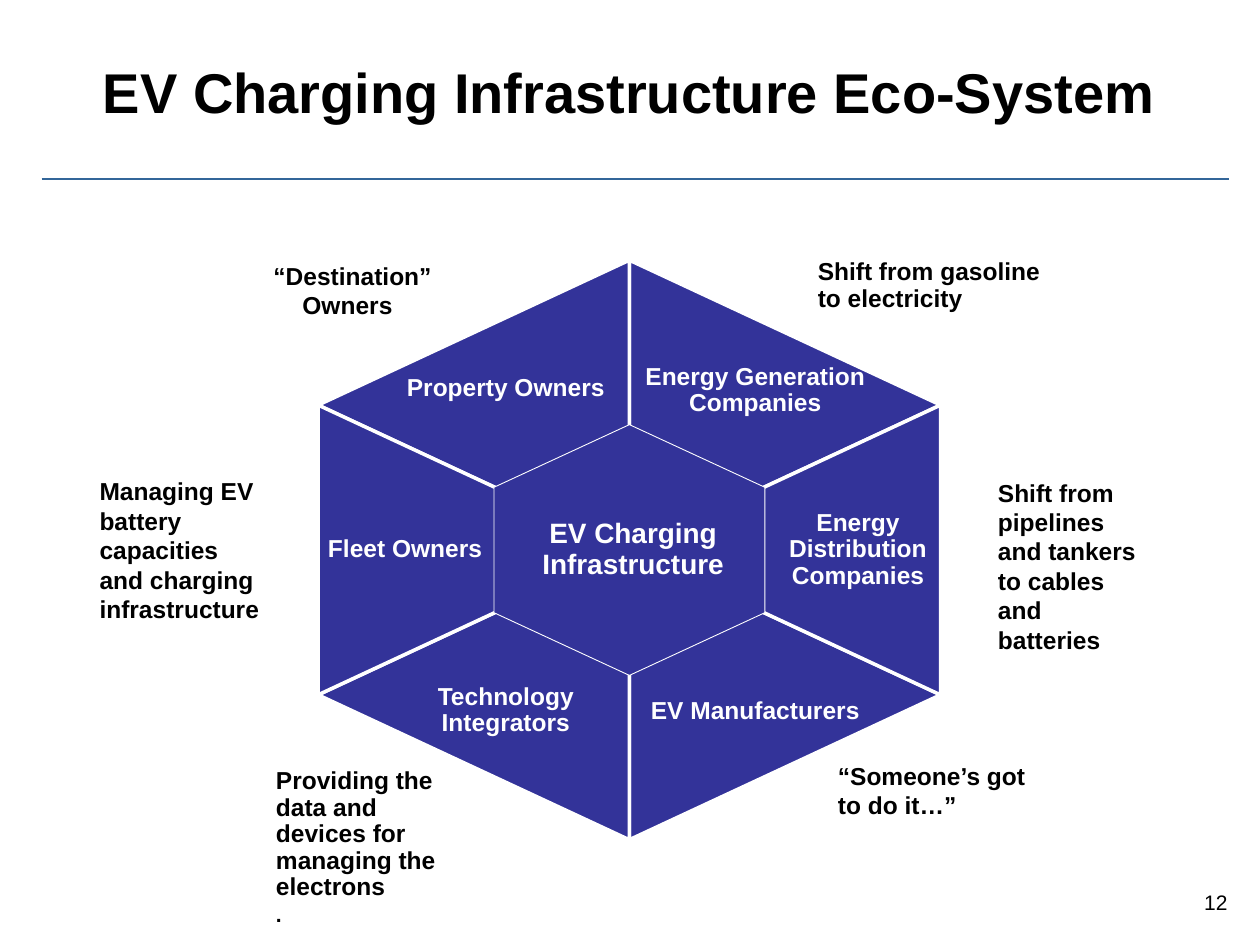
from lxml import etree
from pptx import Presentation
from pptx.dml.color import RGBColor
from pptx.enum.shapes import MSO_CONNECTOR, MSO_SHAPE
from pptx.enum.text import MSO_ANCHOR, MSO_AUTO_SIZE, PP_ALIGN
from pptx.oxml.ns import qn
from pptx.util import Inches, Pt

LINE = MSO_CONNECTOR.STRAIGHT
WEDGE = MSO_SHAPE.ISOSCELES_TRIANGLE
HEX = MSO_SHAPE.HEXAGON
TOP, MID = MSO_ANCHOR.TOP, MSO_ANCHOR.MIDDLE
LEFT, CENTER, RIGHT = PP_ALIGN.LEFT, PP_ALIGN.CENTER, PP_ALIGN.RIGHT
GROW, FIXED = MSO_AUTO_SIZE.SHAPE_TO_FIT_TEXT, MSO_AUTO_SIZE.NONE

BLACK = RGBColor(0, 0, 0)
WHITE = RGBColor(255, 255, 255)
NAVY = RGBColor(0x33, 0x33, 0x99)
BLUE = RGBColor(0x33, 0x66, 0x99)

WIDE, HIGH = Inches(10), Inches(7.5)
COLS, ROWS = 100, 75
HUB_X, HUB_Y = 49.95, 43.65
WEDGE_W, WEDGE_H = 23, 24.7

NOTES = [
    (["Shift from gasoline to electricity"], (64.5, 20.6, 18.9, 4.2), 0.9),
    (["Shift from pipelines and tankers to cables and batteries"],
     (78.8, 37.9, 11.9, 14.1), 1),
    (["“Someone’s got to do it…”"], (66.1, 60.4, 15.8, 6.8), 1),
    (["Managing EV battery capacities and charging infrastructure"],
     (7.5, 37.8, 14, 11.8), 1),
    (["Providing the data and devices for managing the electrons", "."],
     (21.5, 61, 14.8, 12.7), 0.9),
]
LABELS = [
    ("Fleet Owners", -17.8, 0, 13.9, 2.1),
    ("Energy Distribution Companies", 18.15, 0, 13.2, 6.4),
    ("Property Owners", -9.8, -12.8, 19.7, 2.1),
    ("Energy Generation Companies", 10, -12.65, 19.7, 4.2),
    ("EV Manufacturers", 10, 12.8, 19.7, 2.1),
    ("Technology Integrators", -9.8, 12.75, 19.7, 4.2),
]


def col(n):
    return int(WIDE * n / COLS)


def row(n):
    return int(HIGH * n / ROWS)


def spot(x, y, w, h):
    return col(x), row(y), col(w), row(h)


def around(x, y, w, h):
    return HUB_X + x - w / 2, HUB_Y + y - h / 2, w, h


def apply(item, values):
    for name, value in values.items():
        setattr(item, name, value)


def add_text(slide, lines, box, size=14, bold=True, color=BLACK, align=LEFT,
             anchor=TOP, pad=(0.04, 0), space=1, fit=GROW):
    frame = slide.shapes.add_textbox(*spot(*box)).text_frame
    side, edge = map(Inches, pad)
    apply(frame, {"word_wrap": True, "auto_size": fit,
                  "vertical_anchor": anchor, "margin_left": side,
                  "margin_right": side, "margin_top": edge,
                  "margin_bottom": edge})
    frame.text = "\n".join(lines)
    for para in frame.paragraphs:
        apply(para, {"alignment": align, "line_spacing": space})
        for run in para.runs:
            apply(run.font, {"name": "Arial", "size": Pt(size), "bold": bold})
            run.font.color.rgb = color
    return frame


def add_label(slide, text, box, size=14):
    add_text(slide, [text], around(*box), size, color=WHITE, align=CENTER,
             anchor=MID, pad=(0, 0), space=0.9)


def add_part(slide, kind, box, turn, width):
    part = slide.shapes.add_shape(kind, *spot(*around(*box)))
    part.rotation = turn
    part.shadow.inherit = False
    part.fill.solid()
    part.fill.fore_color.rgb = NAVY
    part.line.color.rgb = WHITE
    part.line.width = Pt(width)
    return part


def add_rule(slide):
    rule = slide.shapes.add_connector(LINE, col(3.3), row(14.2),
                                      col(97.5), row(14.2))
    rule.line.color.rgb = BLUE
    rule.line.width = Pt(1.5)
    etree.SubElement(rule._element.spPr, qn("a:effectLst"))


def add_wheel(slide):
    for side in (1, -1):
        for step in (1, -1, 0):
            point = side if step else -side
            box = (side * WEDGE_H / 2, step * WEDGE_W / 2, WEDGE_W, WEDGE_H)
            add_part(slide, WEDGE, box, 90 if point > 0 else 270, 2)
    hub = add_part(slide, HEX, (0, 0, 19.9, 21.5), 90, 0.5)
    hub.adjustments[0] = 0.25
    for text, *box in LABELS:
        add_label(slide, text, box)
    add_label(slide, "EV Charging Infrastructure", (0.3, 0, 17.7, 4.8), 16)


def add_notes(slide):
    for lines, box, space in NOTES:
        frame = add_text(slide, lines, box, space=space)
        for para in frame.paragraphs[1:]:
            para.space_before = Pt(2)
            para.runs[0].font.size = Pt(12)
    frame = add_text(slide, ["“Destination” Owners"], (19.4, 20.7, 19, 4.7))
    props = frame.paragraphs[0]._p.get_or_add_pPr()
    for name, inch in {"marL": 0.42, "indent": -0.23}.items():
        props.set(name, str(Inches(inch)))


def main():
    deck = Presentation()
    apply(deck, {"slide_width": WIDE, "slide_height": HIGH})
    slide = deck.slides.add_slide(deck.slide_layouts[6])
    add_rule(slide)
    add_text(slide, ["12"], (94.2, 70.1, 4.2, 3), 12, False, align=RIGHT,
             pad=(0.1, 0.05))
    add_text(slide, ["EV Charging Infrastructure Eco-System"],
             (2.7, 2.2, 94.5, 10), 32, align=CENTER, anchor=MID,
             pad=(0.1, 0.05), fit=FIXED)
    add_wheel(slide)
    add_notes(slide)
    deck.save("out.pptx")


if __name__ == "__main__":
    main()
